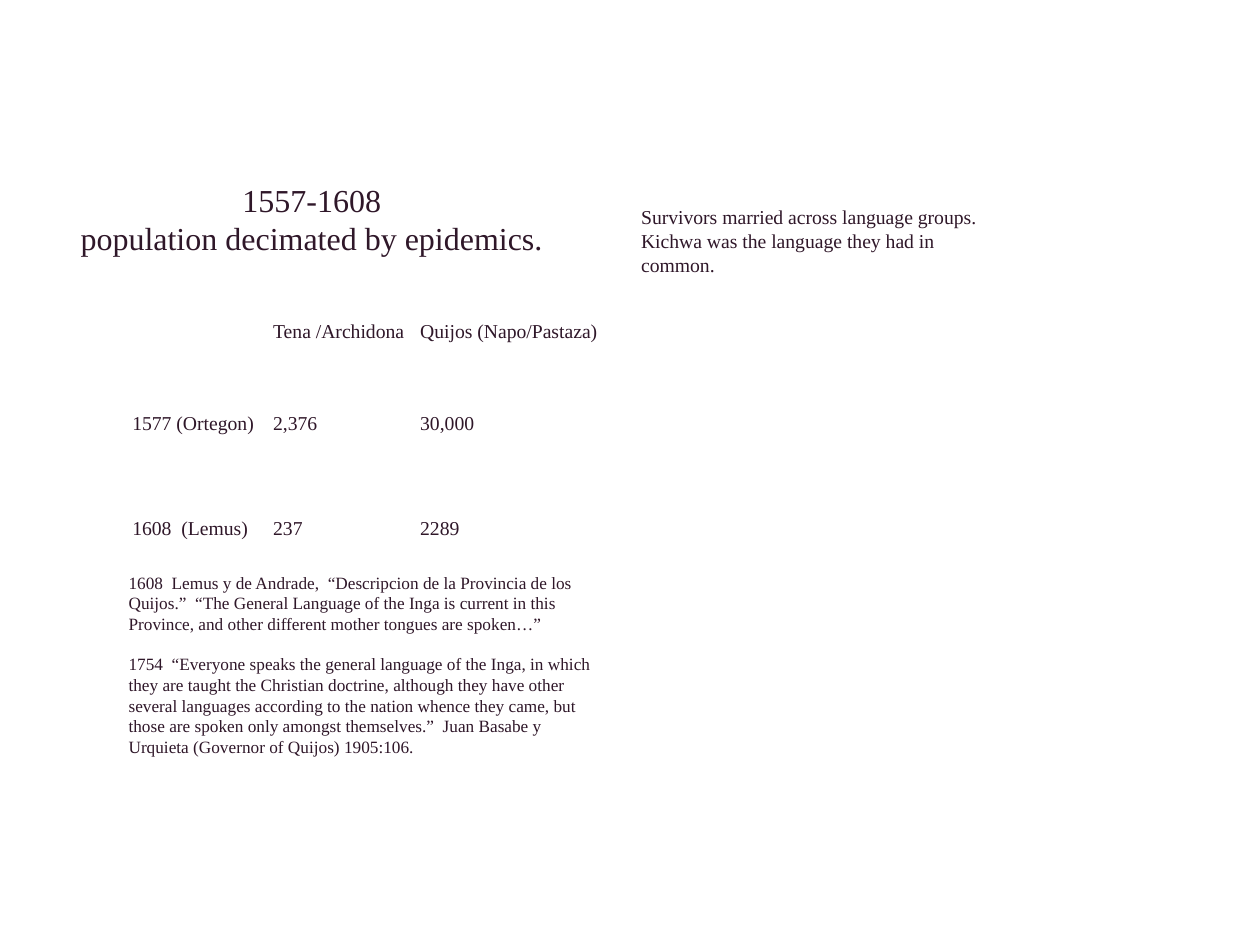
from dataclasses import dataclass

from pptx import Presentation
from pptx.dml.color import RGBColor
from pptx.enum.text import MSO_ANCHOR, MSO_AUTO_SIZE, PP_ALIGN
from pptx.util import Pt


@dataclass(frozen=True)
class Theme:
    face: str = "Times New Roman"
    ink: RGBColor = RGBColor(0x2F, 0x17, 0x29)
    head: int = 26
    main: int = 16
    note: int = 14


THEME = Theme()
SIDES = ("left", "top", "right", "bottom")
TITLE = ["1557-1608", "population decimated by epidemics."]
ROWS = [
    ["", "Tena /Archidona", "Quijos (Napo/Pastaza)"],
    ["1577 (Ortegon)", "2,376", "30,000"],
    ["1608  (Lemus)", "237", "2289"],
]
CLAIM = [
    "Survivors married across language groups. "
    "Kichwa was the language they had in common."
]
QUOTES = [
    "1608  Lemus y de Andrade,  “Descripcion de la Provincia de los Quijos.”  "
    "“The General Language of the Inga is current in this Province, and other "
    "different mother tongues are spoken…”",
    "1754  “Everyone speaks the general language of the Inga, in which they are "
    "taught the Christian doctrine, although they have other several languages "
    "according to the nation whence they came, but those are spoken only amongst "
    "themselves.”  Juan Basabe y Urquieta (Governor of Quijos) 1905:106.",
]


def apply(target, values):
    for name, value in values.items():
        setattr(target, name, value)


def write(frame, lines, size, align=PP_ALIGN.LEFT, gap=0):
    frame.text = "\n".join(lines)
    for index, para in enumerate(frame.paragraphs):
        apply(para, {"alignment": align, "space_before": Pt(gap if index else 0)})
        for run in para.runs:
            apply(run.font, {"name": THEME.face, "size": Pt(size), "bold": False})
            run.font.color.rgb = THEME.ink


def set_text(shape, box, lines, size, **style):
    apply(shape, dict(zip(("left", "top", "width", "height"), map(Pt, box))))
    frame = shape.text_frame
    apply(frame, {
        "word_wrap": True,
        "auto_size": MSO_AUTO_SIZE.SHAPE_TO_FIT_TEXT,
        "vertical_anchor": MSO_ANCHOR.MIDDLE,
        **{f"margin_{side}": Pt(3) for side in SIDES},
    })
    write(frame, lines, size, **style)


def add_text(slide, box, lines, size, **style):
    shape = slide.shapes.add_textbox(*map(Pt, box))
    set_text(shape, box, lines, size, **style)


def add_grid(slide, left, top, widths, heights, rows):
    box = (left, top, sum(widths), sum(heights))
    grid = slide.shapes.add_table(len(rows), len(widths), *map(Pt, box)).table
    apply(grid, {"first_row": False, "horz_banding": False})
    for column, width in zip(grid.columns, widths):
        column.width = Pt(width)
    for row, height, words in zip(grid.rows, heights, rows):
        row.height = Pt(height)
        for cell, word in zip(row.cells, words):
            cell.fill.background()
            apply(cell, {
                "vertical_anchor": MSO_ANCHOR.MIDDLE,
                **{f"margin_{side}": Pt(4.5) for side in SIDES},
            })
            write(cell.text_frame, [word], THEME.main)


def main():
    deck = Presentation()
    apply(deck, {"slide_width": Pt(1024), "slide_height": Pt(768)})
    slide = deck.slides.add_slide(deck.slide_layouts[5])
    set_text(slide.shapes.title, (-36.5, 145, 580, 65), TITLE, THEME.head,
             align=PP_ALIGN.CENTER)
    add_grid(slide, 103, 224, (114.5, 119.5, 299), (91, 59, 111), ROWS)
    add_text(slide, (518, 166, 303, 59), CLAIM, THEME.main)
    add_text(slide, (101.5, 465, 385, 150), QUOTES, THEME.note, gap=16)
    deck.save("out.pptx")


if __name__ == "__main__":
    main()
